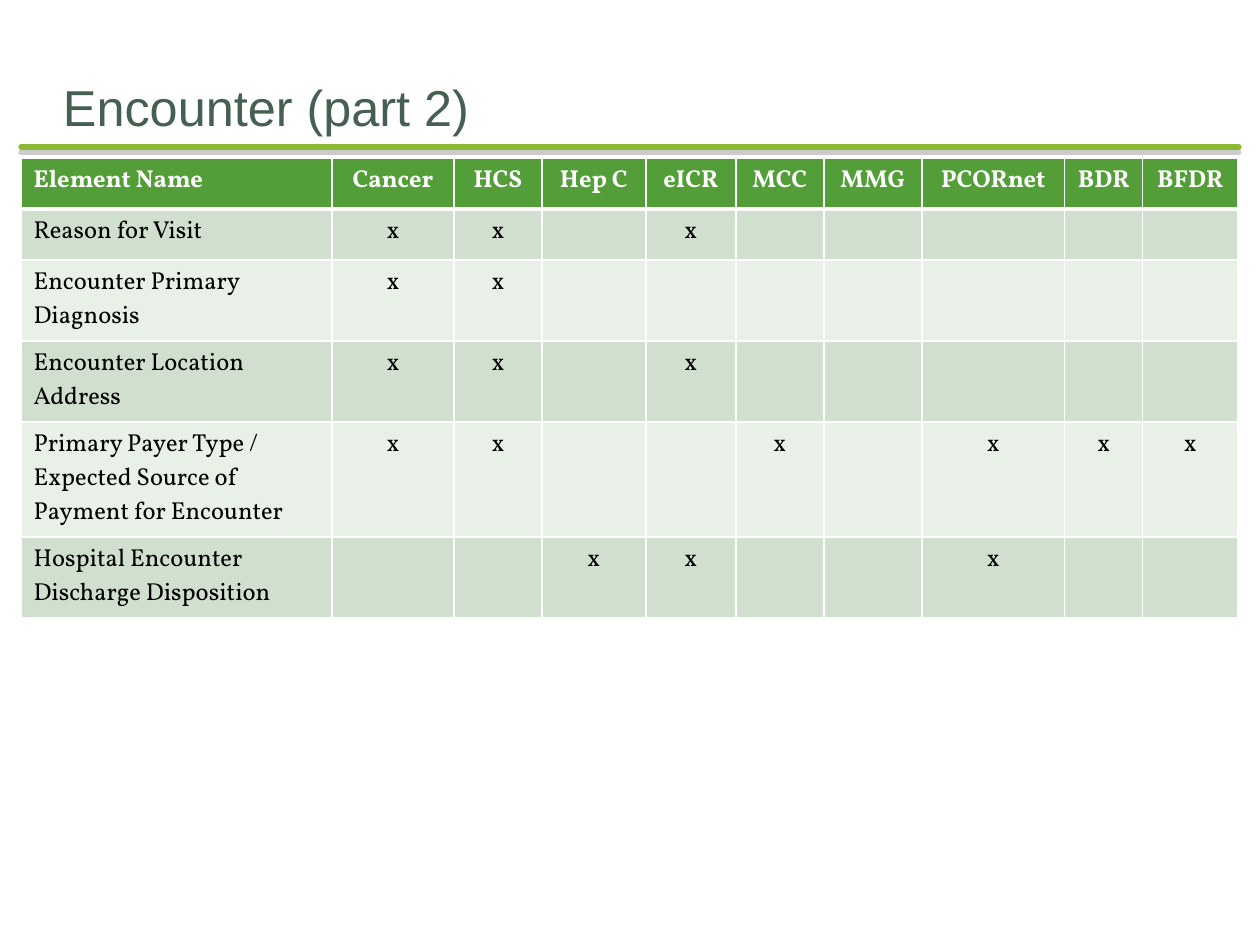
from dataclasses import dataclass

from lxml import etree
from pptx import Presentation
from pptx.dml.color import RGBColor
from pptx.enum.shapes import MSO_CONNECTOR
from pptx.enum.text import MSO_ANCHOR, PP_ALIGN
from pptx.oxml.ns import qn
from pptx.util import Pt

STRAIGHT = MSO_CONNECTOR.STRAIGHT
BOTTOM = MSO_ANCHOR.BOTTOM
LEFT, CENTER = PP_ALIGN.LEFT, PP_ALIGN.CENTER
SCALE = 914400 / 126


@dataclass(frozen=True)
class Theme:
    white: str = "FFFFFF"
    black: str = "000000"
    title: str = "455F51"
    rule: str = "8AB833"
    shade: str = "808080"
    head: str = "549E39"
    bands: tuple = ("D1DFCE", "E9F0E8")
    sans: str = "Arial"
    serif: str = "Vollkorn"
    big: float = 28.8
    body: float = 14


THEME = Theme()
HEADS = ["Element Name", "Cancer", "HCS", "Hep C", "eICR", "MCC", "MMG",
         "PCORnet", "BDR", "BFDR"]
WIDTHS = [311, 122, 88, 104, 90, 88, 98, 143, 78, 95]
HEIGHTS = [51, 51, 81, 81, 115, 81]
ROWS = [
    ("Reason for Visit", {"Cancer", "HCS", "eICR"}),
    ("Encounter Primary Diagnosis", {"Cancer", "HCS"}),
    ("Encounter Location Address", {"Cancer", "HCS", "eICR"}),
    ("Primary Payer Type / Expected Source of Payment for Encounter",
     {"Cancer", "HCS", "MCC", "PCORnet", "BDR", "BFDR"}),
    ("Hospital Encounter Discharge Disposition", {"Hep C", "eICR", "PCORnet"}),
]


def px(size):
    return round(size * SCALE)


def apply(item, values):
    for name, value in values.items():
        setattr(item, name, value)


def write(frame, text, color, align=LEFT, **font):
    para = frame.paragraphs[0]
    para.alignment = align
    run = para.add_run()
    run.text = text
    apply(run.font, font)
    run.font.color.rgb = RGBColor.from_string(color)


def node(parent, tag, **values):
    return etree.SubElement(parent, qn(tag), values)


def add_rule(slide):
    rule = slide.shapes.add_connector(STRAIGHT, px(21), px(147), px(1239), px(147))
    rule.line.width = Pt(3)
    rule.line.color.rgb = RGBColor.from_string(THEME.rule)
    rule.line._get_or_add_ln().set("cap", "rnd")
    effects = node(rule._element.spPr, "a:effectLst")
    shadow = node(effects, "a:outerShdw", blurRad="0", dist=str(Pt(3)),
                  dir="5400000", rotWithShape="0")
    color = node(shadow, "a:srgbClr", val=THEME.shade)
    node(color, "a:alpha", val="40000")


def add_title(slide, text):
    box = slide.shapes.add_textbox(px(63), px(64), px(1134), px(73))
    frame = box.text_frame
    apply(frame, {"word_wrap": True, "vertical_anchor": BOTTOM,
                  "margin_left": 0, "margin_right": 0,
                  "margin_top": px(6), "margin_bottom": 0})
    write(frame, text, THEME.title, name=THEME.sans, size=Pt(THEME.big))


def add_edges(cell, top, base):
    props = cell._tc.get_or_add_tcPr()
    for side, width in {"L": 1, "R": 1, "T": top, "B": base}.items():
        line = node(props, f"a:ln{side}", w=str(Pt(width)))
        fill = node(line, "a:solidFill")
        node(fill, "a:srgbClr", val=THEME.white)


def add_grid(slide):
    rows = [HEADS] + [[name] + ["x" if head in marks else "" for head in HEADS[1:]]
                      for name, marks in ROWS]
    table = slide.shapes.add_table(len(rows), len(HEADS), px(21), px(158),
                                   px(sum(WIDTHS)), px(sum(HEIGHTS))).table
    for col, width in zip(table.columns, WIDTHS):
        col.width = px(width)
    for r, (texts, high) in enumerate(zip(rows, HEIGHTS)):
        table.rows[r].height = px(high)
        head = r == 0
        fill = THEME.head if head else THEME.bands[(r - 1) % 2]
        color = THEME.white if head else THEME.black
        for c, text in enumerate(texts):
            cell = table.cell(r, c)
            add_edges(cell, 3 if r == 1 else 1, 3 if head else 1)
            cell.fill.solid()
            cell.fill.fore_color.rgb = RGBColor.from_string(fill)
            if text:
                write(cell.text_frame, text, color, CENTER if c else LEFT,
                      name=THEME.serif, size=Pt(THEME.body), bold=head)


def main():
    deck = Presentation()
    apply(deck, {"slide_width": px(1260), "slide_height": px(945)})
    slide = deck.slides.add_slide(deck.slide_layouts[6])
    add_rule(slide)
    add_title(slide, "Encounter (part 2)")
    add_grid(slide)
    deck.save("out.pptx")


if __name__ == "__main__":
    main()
